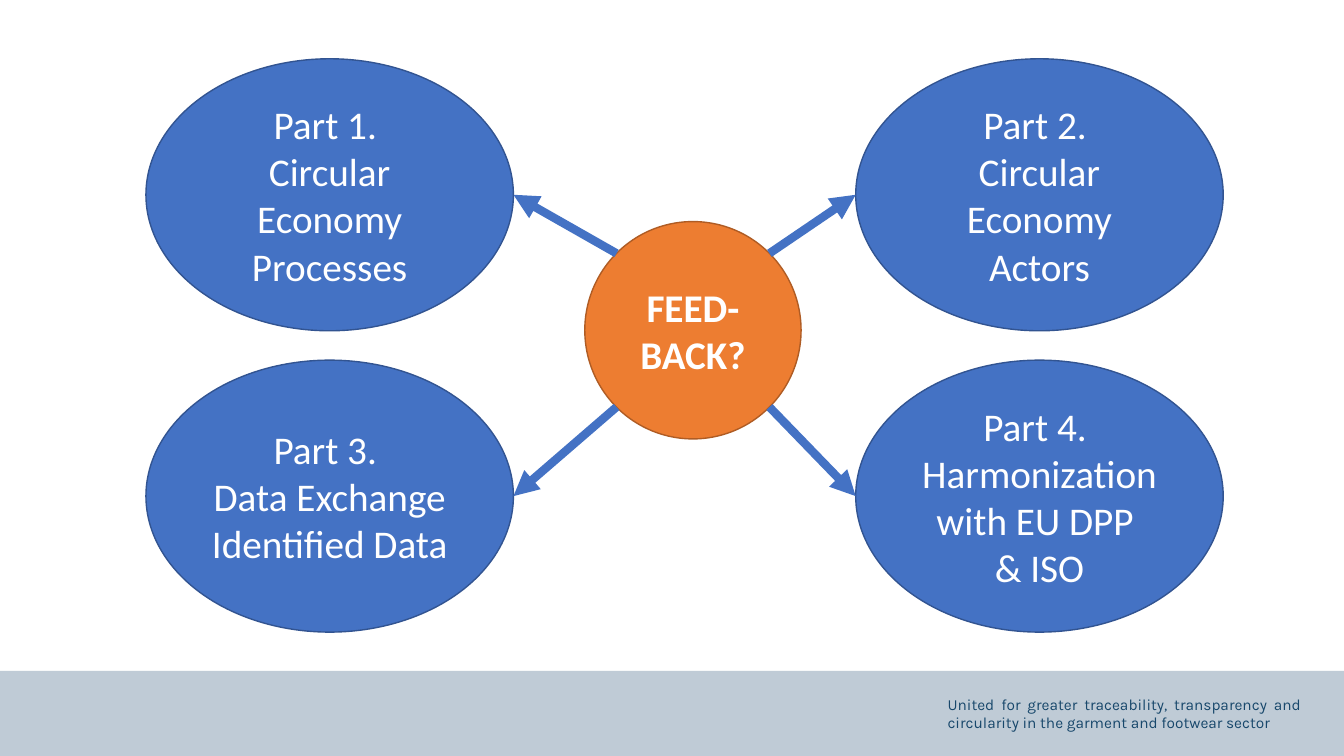
from math import sqrt

from lxml.etree import SubElement
from pptx import Presentation
from pptx.dml.color import RGBColor
from pptx.enum.shapes import MSO_CONNECTOR, MSO_SHAPE
from pptx.enum.text import MSO_ANCHOR, PP_ALIGN
from pptx.oxml.ns import qn
from pptx.util import Pt

PX = 9525  # EMU per px, 96 px to the inch
SLIDE_W, SLIDE_H = 1280, 720


def px(*lengths):
    return [round(length * PX) for length in lengths]


def color(hex_string):
    return RGBColor.from_string(hex_string)


def write(frame, text, size=28, font="Calibri", ink="FFFFFF", bold=False,
          align=PP_ALIGN.CENTER, anchor=MSO_ANCHOR.MIDDLE):
    """Each \\n starts a paragraph, each \\v breaks a line."""
    frame.word_wrap = True
    frame.vertical_anchor = anchor
    frame.text = text
    for paragraph in frame.paragraphs:
        paragraph.alignment = align
        for run in paragraph.runs:
            run.font.size = Pt(size)
            run.font.name = font
            run.font.bold = bold
            run.font.color.rgb = color(ink)


class FeedbackSlide:
    BLUE, BLUE_EDGE = "4472C4", "325491"
    ORANGE, ORANGE_EDGE = "ED7D31", "AF5C24"
    BAND, NAVY = "BFCBD6", "17476B"

    def __init__(self, presentation):
        self.slide = presentation.slides.add_slide(presentation.slide_layouts[6])

    def shape(self, kind, box, fill, edge=None):
        shape = self.slide.shapes.add_shape(kind, *px(*box))
        shape.shadow.inherit = False
        shape.fill.solid()
        shape.fill.fore_color.rgb = color(fill)
        if edge:
            shape.line.color.rgb = color(edge)
            shape.line.width = Pt(1)
        else:
            shape.line.fill.background()
        return shape

    def ellipse(self, box, text, fill, edge, **style):
        write(self.shape(MSO_SHAPE.OVAL, box, fill, edge).text_frame, text, **style)

    def label(self, box, text, **style):
        write(self.slide.shapes.add_textbox(*px(*box)).text_frame, text, **style)

    def arrow(self, start, end):
        arrow = self.slide.shapes.add_connector(
            MSO_CONNECTOR.STRAIGHT, *px(*start, *end))
        arrow.line.color.rgb = color(self.BLUE)
        arrow.line.width = Pt(6)
        SubElement(arrow.line._get_or_add_ln(), qn("a:tailEnd"), type="triangle")
        SubElement(arrow._element.spPr, qn("a:effectLst"))


def main():
    presentation = Presentation()
    presentation.slide_width, presentation.slide_height = px(SLIDE_W, SLIDE_H)
    page = FeedbackSlide(presentation)

    # Footer band and motto
    page.shape(MSO_SHAPE.RECTANGLE, (0, 639, SLIDE_W, 81), page.BAND)
    page.label((893, 657, 356, 45),
               "United for greater traceability, transparency and "
               "circularity in the garment and footwear sector",
               size=11, font="Karla", ink=page.NAVY,
               align=PP_ALIGN.JUSTIFY, anchor=MSO_ANCHOR.TOP)

    # Four parts, two by two
    part_w, part_h = 350, 259
    columns, rows = (139, 815), (56, 343)
    parts = [
        "Part 1. \nCircular Economy Processes",
        "Part 2. \nCircular Economy Actors",
        "Part 3. \vData Exchange\nIdentified Data",
        "Part 4. \nHarmonization with EU DPP \v& ISO",
    ]
    for index, part in enumerate(parts):
        box = (columns[index % 2], rows[index // 2], part_w, part_h)
        page.ellipse(box, part, page.BLUE, page.BLUE_EDGE)

    # Feedback hub
    hub_x, hub_y, hub_w, hub_h = 557, 211, 206, 207
    page.ellipse((hub_x, hub_y, hub_w, hub_h), "FEED-BACK?",
                 page.ORANGE, page.ORANGE_EDGE, bold=True)

    # Arrows from the hub's diagonals to the inner tip of each part
    middle_x, middle_y = hub_x + hub_w / 2, hub_y + hub_h / 2
    reach_x, reach_y = hub_w / 2 / sqrt(2), hub_h / 2 / sqrt(2)
    inner_tips = (columns[0] + part_w, columns[1])
    for row, down in zip(rows, (-1, 1)):
        for tip_x, right in zip(inner_tips, (-1, 1)):
            page.arrow((middle_x + right * reach_x, middle_y + down * reach_y),
                       (tip_x, row + part_h / 2))

    presentation.save("out.pptx")


if __name__ == "__main__":
    main()
